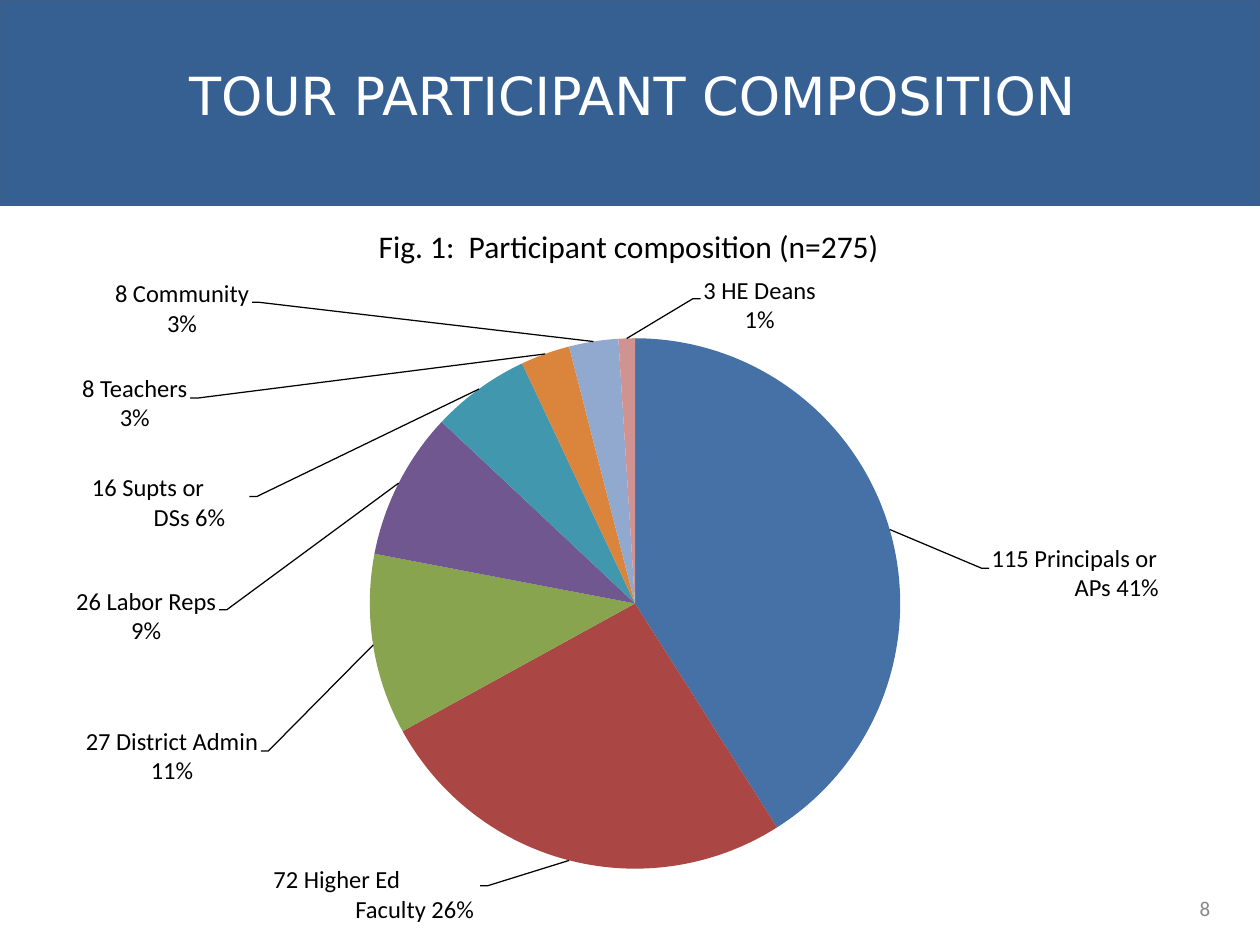
import math
from dataclasses import dataclass

from lxml import etree
from pptx import Presentation
from pptx import util as u
from pptx.chart.data import CategoryChartData
from pptx.dml.color import RGBColor
from pptx.enum import chart as ch
from pptx.enum import shapes, text
from pptx.oxml.ns import qn

# The slide is a grid of 100 columns by 75 rows; every cell is a tenth of an inch.
COLS, ROWS = 100, 75
CELL = u.Inches(0.1)

COLORS = {
    "band": "376092", "band_edge": "3A5F8C", "white": "FFFFFF",
    "black": "000000", "number": "888888",
}
BODY, HEADING = "Calibri", "DejaVu Sans"
CENTER, RADIUS = (50.4, 47.9), 21.05
FRAME = 50  # side of the square chart frame around the pie
TICK = 0.6  # horizontal end of a leader line


@dataclass(frozen=True)
class Slice:
    name: str
    rest: str
    share: int
    color: str
    box: tuple[float, float, float]  # column, row, width
    elbow: tuple[float, float]
    hang: float = 0  # indent of the second line; 0 centres both lines


SLICES = [
    Slice("115 Principals or", "APs 41%", 41, "4571A7", (78.7, 43.1, 16.7), (77.9, 45.1), 6.6),
    Slice("72 Higher Ed", "Faculty 26%", 26, "AA4643", (21.7, 68.6, 17.5), (38.7, 70.3), 6.5),
    Slice("27 District Admin", "11%", 11, "88A44E", (6.2, 57.6, 14.9), (21.3, 59.6)),
    Slice("26 Labor Reps", "9%", 9, "70578F", (5.5, 46.5, 12.2), (18, 48.4)),
    Slice("16 Supts or", "DSs 6%", 6, "4197AE", (7.3, 37.5, 13), (20.4, 39.4), 4.9),
    Slice("8 Teachers", "3%", 3, "DB843C", (5.7, 29.6, 10), (15.7, 31.6)),
    Slice("8 Community", "3%", 3, "92A9CF", (8.5, 22.1, 11.9), (20.6, 24)),
    Slice("3 HE Deans", "1%", 1, "D19292", (55.3, 21.8, 10), (55, 23.7)),
]


def cells(*values: float) -> list[int]:
    return [u.Emu(round(v * CELL)) for v in values]


def rgb(name: str) -> RGBColor:
    return RGBColor.from_string(COLORS.get(name, name))


def add_text(slide, box: tuple, content: str, size: float, color: str = "black",
             font: str = BODY, align=text.PP_ALIGN.CENTER, hang: float = 0) -> None:
    """Write one paragraph; a vertical tab in content breaks the line."""
    tf = slide.shapes.add_textbox(*cells(*box)).text_frame
    frame_format = {"word_wrap": True, "margin_left": 0, "margin_right": 0,
                    "margin_top": 0, "margin_bottom": 0}
    for name, value in frame_format.items():
        setattr(tf, name, value)
    p = tf.paragraphs[0]
    p.text, p.alignment = content, align
    if hang:
        indent = cells(hang)[0]
        p._p.get_or_add_pPr().set("marL", str(indent))
        p._p.get_or_add_pPr().set("indent", str(-indent))
    for r in p.runs:
        for name, value in {"size": u.Pt(size), "name": font}.items():
            setattr(r.font, name, value)
        r.font.color.rgb = rgb(color)


def add_band(slide) -> None:
    sp = slide.shapes.add_shape(shapes.MSO_SHAPE.RECTANGLE, *cells(0, 0, COLS, 16.2))
    sp.shadow.inherit = False
    sp.fill.solid()
    sp.fill.fore_color.rgb = rgb("band")
    sp.line.color.rgb = rgb("band_edge")
    sp.line.width = u.Pt(2)


def add_pie(slide) -> None:
    data = CategoryChartData(number_format='0"%"')
    data.categories = [s.name for s in SLICES]
    data.add_series("Share of participants", [s.share for s in SLICES])
    left, top = (c - FRAME / 2 for c in CENTER)
    chart = slide.shapes.add_chart(
        ch.XL_CHART_TYPE.PIE, *cells(left, top, FRAME, FRAME), data).chart
    chart.has_title = chart.has_legend = False
    chart.font.name, chart.font.size = BODY, u.Pt(14)
    plot = chart.plots[0]
    plot.vary_by_categories = True
    for i, s in enumerate(SLICES):
        fmt = plot.series[0].points[i].format
        fmt.fill.solid()
        fmt.fill.fore_color.rgb = rgb(s.color)
        fmt.line.fill.background()
    set_plot_area(chart, 2 * RADIUS / FRAME)


def set_plot_area(chart, share: float) -> None:
    """Centre the pie in its frame at the given share of the frame's side."""
    area = chart._chartSpace.chart.plotArea
    for old in area.findall(qn("c:layout")):
        area.remove(old)
    layout = etree.Element(qn("c:layout"))
    area.insert(0, layout)
    manual = etree.SubElement(layout, qn("c:manualLayout"))
    edge = (1 - share) / 2
    values = {"layoutTarget": "inner", "xMode": "edge", "yMode": "edge",
              "x": edge, "y": edge, "w": share, "h": share}
    for tag, value in values.items():
        etree.SubElement(manual, qn(f"c:{tag}")).set("val", str(value))


def add_leader(slide, s: Slice, middle: float) -> None:
    """Draw from the middle of the slice's rim to its label."""
    angle = math.tau * middle / 100
    rim = (CENTER[0] + RADIUS * math.sin(angle), CENTER[1] - RADIUS * math.cos(angle))
    x, y = s.elbow
    end = (x + math.copysign(TICK, x - rim[0]), y)
    if s.box[0] > x:
        end = (x + TICK, y)
    builder = slide.shapes.build_freeform(*cells(*rim))
    builder.add_line_segments([cells(*pt) for pt in (s.elbow, end)], close=False)
    sp = builder.convert_to_shape()
    sp.shadow.inherit = False
    sp.fill.background()
    sp.line.color.rgb = rgb("black")
    sp.line.width = u.Pt(0.72)


def add_labels(slide) -> None:
    start = 0
    for s in SLICES:
        add_leader(slide, s, start + s.share / 2)
        start += s.share
        align = text.PP_ALIGN.LEFT if s.hang else text.PP_ALIGN.CENTER
        add_text(slide, (*s.box, 5), f"{s.name}\v{s.rest}", 14, align=align, hang=s.hang)


def main() -> None:
    prs = Presentation()
    prs.slide_width, prs.slide_height = cells(COLS, ROWS)
    slide = prs.slides.add_slide(prs.slide_layouts[6])
    add_band(slide)
    add_text(slide, (0.4, 5, COLS - 0.4, 5), "TOUR PARTICIPANT COMPOSITION", 30,
             "white", HEADING)
    add_pie(slide)
    add_text(slide, (29.9, 18, 40, 3), "Fig. 1:  Participant composition (n=275)", 18)
    add_labels(slide)
    add_text(slide, (95.2, 71.1, 1.5, 2.2), "8", 12, "number", align=text.PP_ALIGN.LEFT)
    prs.save("out.pptx")


if __name__ == "__main__":
    main()
